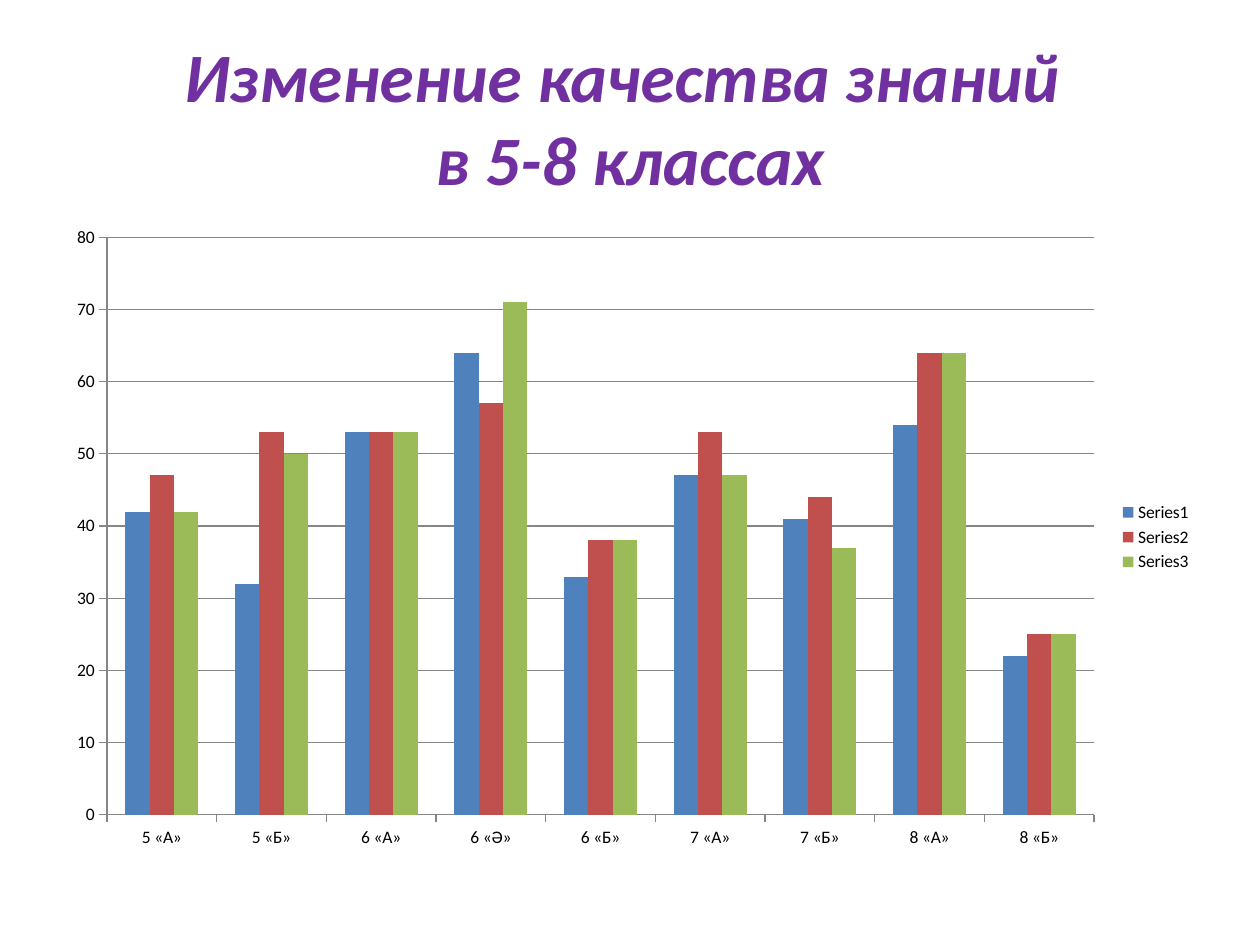
"""Builds a slide that charts the quality of knowledge in grades 5-8."""
from dataclasses import dataclass

import pptx
import pptx.chart.data
import pptx.dml.color
import pptx.enum.chart
import pptx.enum.text
import pptx.util

FONT = "Calibri"
AXIS_COLOR = "868686"
TITLE_LINES = ("Изменение качества знаний ", "в 5-8 классах")
CLASSES = ("5 «А»", "5 «Б»", "6 «А»", "6 «Ә»", "6 «Б»", "7 «А»", "7 «Б»", "8 «А»", "8 «Б»")


@dataclass(frozen=True)
class Box:
    """A frame given as shares of the slide's width and height."""
    left: float
    top: float
    width: float
    height: float


@dataclass(frozen=True)
class Series:
    """One set of columns."""
    name: str
    color: str
    values: tuple[int, ...]


TITLE_BOX = Box(0.05, 0.04, 0.9, 1 / 6)
CHART_BOX = Box(0.043, 0.227, 0.913, 0.683)
SERIES = (
    Series("Series1", "4F81BD", (42, 32, 53, 64, 33, 47, 41, 54, 22)),
    Series("Series2", "C0504D", (47, 53, 53, 57, 38, 53, 44, 64, 25)),
    Series("Series3", "9BBB59", (42, 50, 53, 71, 38, 47, 37, 64, 25)),
)


def rgb(color: str) -> pptx.dml.color.RGBColor:
    """Turn a hex string into a colour."""
    return pptx.dml.color.RGBColor.from_string(color)


def frame(presentation, box: Box) -> tuple[int, int, int, int]:
    """Turn a box into left, top, width and height on the slide."""
    width, height = presentation.slide_width, presentation.slide_height
    return (round(box.left * width), round(box.top * height),
            round(box.width * width), round(box.height * height))


def style_font(font, size: float, color: str) -> None:
    """Set typeface, size and colour."""
    font.name = FONT
    font.size = pptx.util.Pt(size)
    font.color.rgb = rgb(color)


def style_line(line) -> None:
    """Draw an axis or grid line thin and grey."""
    line.color.rgb = rgb(AXIS_COLOR)
    line.width = pptx.util.Pt(0.75)


def write_title(presentation, slide) -> None:
    """Place and fill the title placeholder."""
    shape = slide.shapes.title
    shape.left, shape.top, shape.width, shape.height = frame(presentation, TITLE_BOX)
    shape.text_frame.vertical_anchor = pptx.enum.text.MSO_ANCHOR.MIDDLE
    paragraph = shape.text_frame.paragraphs[0]
    paragraph.alignment = pptx.enum.text.PP_ALIGN.CENTER
    for index, line in enumerate(TITLE_LINES):
        if index:
            paragraph.add_line_break()
        run = paragraph.add_run()
        run.text = line
        style_font(run.font, 39.6, "7030A0")
        run.font.bold = True
        run.font.italic = True


def draw_chart(presentation, slide) -> None:
    """Add the clustered column chart."""
    data = pptx.chart.data.CategoryChartData()
    data.categories = CLASSES
    for series in SERIES:
        data.add_series(series.name, series.values)
    chart = slide.shapes.add_chart(
        pptx.enum.chart.XL_CHART_TYPE.COLUMN_CLUSTERED, *frame(presentation, CHART_BOX), data).chart
    style_font(chart.font, 10, "000000")
    chart.has_title = False
    chart.has_legend = True
    chart.legend.position = pptx.enum.chart.XL_LEGEND_POSITION.RIGHT
    chart.legend.include_in_layout = False

    plot = chart.plots[0]
    plot.vary_by_categories = False
    plot.gap_width = 150
    plot.overlap = 0
    for drawn, series in zip(plot.series, SERIES):
        drawn.format.fill.solid()
        drawn.format.fill.fore_color.rgb = rgb(series.color)

    for axis in (chart.category_axis, chart.value_axis):
        axis.major_tick_mark = pptx.enum.chart.XL_TICK_MARK.OUTSIDE
        axis.minor_tick_mark = pptx.enum.chart.XL_TICK_MARK.NONE
        style_line(axis.format.line)
    value_axis = chart.value_axis
    value_axis.minimum_scale, value_axis.maximum_scale, value_axis.major_unit = 0, 80, 10
    value_axis.has_major_gridlines = True
    style_line(value_axis.major_gridlines.format.line)


def main() -> None:
    """Build and save the slide."""
    presentation = pptx.Presentation()
    presentation.slide_width = pptx.util.Inches(10)
    presentation.slide_height = pptx.util.Inches(7.5)
    slide = presentation.slides.add_slide(presentation.slide_layouts.get_by_name("Title Only"))
    write_title(presentation, slide)
    draw_chart(presentation, slide)
    presentation.save("out.pptx")


if __name__ == "__main__":
    main()
